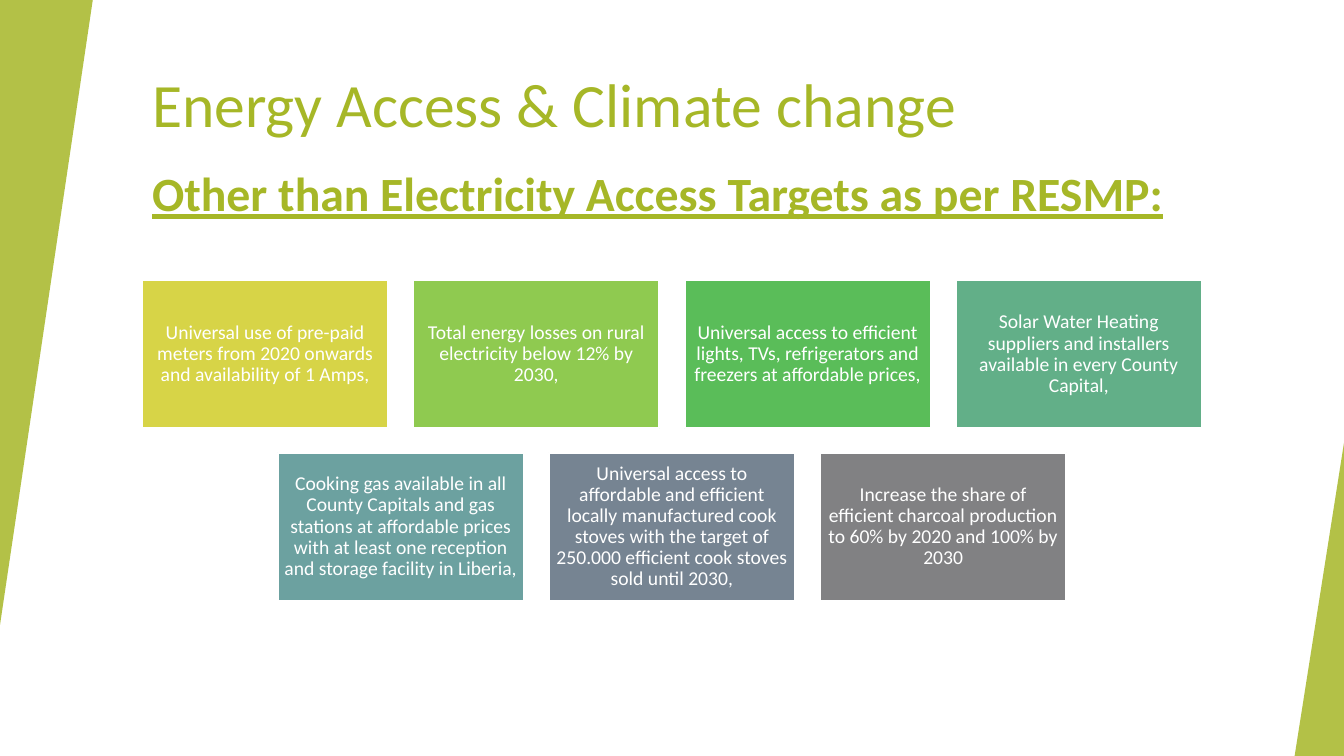
from dataclasses import dataclass

from pptx import Presentation
from pptx.dml.color import RGBColor
from pptx.enum.shapes import MSO_SHAPE
from pptx.enum.text import MSO_ANCHOR, PP_ALIGN
from pptx.oxml.ns import qn
from pptx.shapes.autoshape import Shape
from pptx.slide import Slide
from pptx.util import Inches, Pt

GREEN = "A6B727"
WHITE = "FFFFFF"
WIDTH = 13.33
CARD_W, CARD_H = 2.44, 1.47
GAP = 0.25
TOP = 2.78
PITCH = 1.71


@dataclass
class Wedge:
    left: float
    top: float
    width: float
    height: float
    turn: int


@dataclass
class Heading:
    text: str
    top: float
    size: float
    spacing: float
    strong: bool


@dataclass
class Card:
    text: str
    fill: str


WEDGES = [
    Wedge(0, 0, 0.92, 6.2, 180),
    Wedge(12.84, 4.39, 0.49, 3.11, 0),
]

HEADINGS = [
    Heading("Energy Access & Climate change", 0.67, 44, 0.9, False),
    Heading("Other than Electricity Access Targets as per RESMP:", 1.58, 34.1, 0.7, True),
]

ROWS = [
    [
        Card("Universal use of pre-paid meters from 2020 onwards and availability of 1 Amps,", "D7D447"),
        Card("Total energy losses on rural electricity below 12% by 2030,", "8FCA50"),
        Card("Universal access to efficient lights, TVs, refrigerators and freezers at affordable prices,", "5ABD59"),
        Card("Solar Water Heating suppliers and installers available in every County Capital,", "62AF88"),
    ],
    [
        Card("Cooking gas available in all County Capitals and gas stations at affordable prices "
             "with at least one reception and storage facility in Liberia,", "6CA1A0"),
        Card("Universal access to affordable and efficient locally manufactured cook stoves "
             "with the target of 250.000 efficient cook stoves sold until 2030,", "768492"),
        Card("Increase the share of efficient charcoal production to 60% by 2020 and 100% by 2030", "818183"),
    ],
]


def color(code: str) -> RGBColor:
    return RGBColor.from_string(code)


def paint(shape: Shape, code: str) -> None:
    shape.shadow.inherit = False
    shape.fill.solid()
    shape.fill.fore_color.rgb = color(code)


def write(shape: Shape, text: str, size: float, code: str, spacing: float,
          align: PP_ALIGN, strong: bool = False) -> None:
    frame = shape.text_frame
    frame.text = text
    frame.word_wrap = True
    frame.vertical_anchor = MSO_ANCHOR.MIDDLE
    for para in frame.paragraphs:
        para.alignment = align
        para.line_spacing = spacing
        for run in para.runs:
            run.font.name = "Calibri"
            run.font.size = Pt(size)
            run.font.bold = strong
            run.font.underline = strong
            run.font.color.rgb = color(code)


def draw_wedge(slide: Slide, wedge: Wedge) -> None:
    shape = slide.shapes.add_shape(
        MSO_SHAPE.ISOSCELES_TRIANGLE, Inches(wedge.left), Inches(wedge.top),
        Inches(wedge.width), Inches(wedge.height))
    shape.adjustments[0] = 1
    shape.rotation = wedge.turn
    paint(shape, GREEN)
    shape.line.fill.background()
    tint = shape.element.spPr.find(qn("a:solidFill")).find(qn("a:srgbClr"))
    tint.makeelement(qn("a:alpha"), {})
    alpha = tint.makeelement(qn("a:alpha"), {"val": "85000"})
    tint.append(alpha)


def draw_heading(slide: Slide, head: Heading) -> None:
    box = slide.shapes.add_textbox(
        Inches(1.41), Inches(head.top), Inches(11.15), Inches(0.8))
    write(box, head.text, head.size, GREEN, head.spacing, PP_ALIGN.LEFT, head.strong)


def draw_card(slide: Slide, card: Card, left: float, top: float) -> None:
    shape = slide.shapes.add_shape(
        MSO_SHAPE.RECTANGLE, Inches(left), Inches(top), Inches(CARD_W), Inches(CARD_H))
    paint(shape, card.fill)
    shape.line.color.rgb = color(WHITE)
    shape.line.width = Pt(1.5)
    frame = shape.text_frame
    frame.margin_left = frame.margin_right = Inches(0.06)
    frame.margin_top = frame.margin_bottom = Inches(0.06)
    write(shape, card.text, 14, WHITE, 0.9, PP_ALIGN.CENTER)


def draw_row(slide: Slide, cards: list[Card], top: float) -> None:
    span = len(cards) * (CARD_W + GAP) - GAP
    start = (WIDTH - span) / 2
    for index, card in enumerate(cards):
        draw_card(slide, card, start + index * (CARD_W + GAP), top)


def main() -> None:
    deck = Presentation()
    deck.slide_width = Inches(WIDTH)
    deck.slide_height = Inches(7.5)
    slide = deck.slides.add_slide(deck.slide_layouts[6])
    slide.background.fill.solid()
    slide.background.fill.fore_color.rgb = color(WHITE)
    for wedge in WEDGES:
        draw_wedge(slide, wedge)
    for head in HEADINGS:
        draw_heading(slide, head)
    for index, cards in enumerate(ROWS):
        draw_row(slide, cards, TOP + index * PITCH)
    deck.save("out.pptx")


if __name__ == "__main__":
    main()
